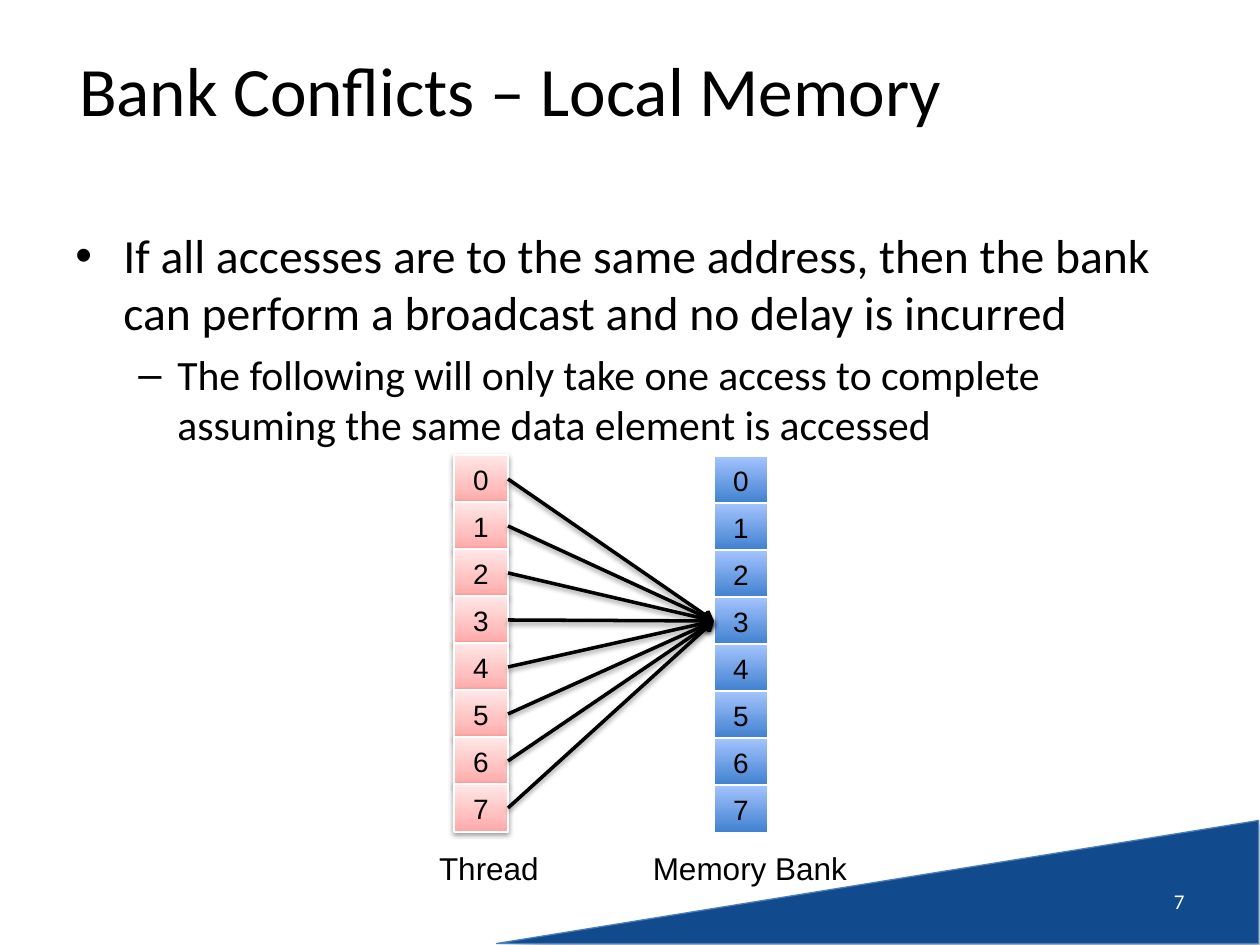
from lxml.etree import SubElement
from pptx import Presentation
from pptx.dml.color import RGBColor
from pptx.enum.shapes import MSO_CONNECTOR, MSO_SHAPE
from pptx.enum.text import MSO_ANCHOR, MSO_AUTO_SIZE, PP_ALIGN
from pptx.oxml.ns import qn
from pptx.util import Emu, Pt

PX_PER_INCH = 126
BLACK, WHITE = "000000", "FFFFFF"
THREAD_STOPS = [(0, "FFA6A5"), (35, "FFC0BF"), (100, "FFE7E7")]
BANK_STOPS = [(0, "3F80CE"), (100, "A4C4FF")]
CELL_COUNT, CELL_PITCH, CELL_WIDTH, CELL_HEIGHT = 8, 47, 54, 48
TARGET_BANK = 3


def px(length):
    return Emu(round(length * 914400 / PX_PER_INCH))


def box(*lengths):
    return [px(length) for length in lengths]


def color(hex_code):
    return RGBColor.from_string(hex_code)


def write(frame, text, size, font="Calibri", ink=BLACK, align=PP_ALIGN.CENTER,
          anchor=MSO_ANCHOR.MIDDLE, wrap=True):
    frame.auto_size = MSO_AUTO_SIZE.NONE
    frame.word_wrap = wrap
    frame.vertical_anchor = anchor
    frame.text = text
    paragraph = frame.paragraphs[0]
    paragraph.alignment = align
    format_font(paragraph.font, size, font, ink)


def format_font(target, size, name, ink):
    target.size = Pt(size)
    target.name = name
    target.color.rgb = color(ink)


def add_shadow(shape, opacity, distance=1.6):
    """Cast a soft shadow straight down; call after fill and line are set."""
    effects = SubElement(shape._element.spPr, qn("a:effectLst"))
    shadow = SubElement(effects, qn("a:outerShdw"), blurRad=str(Pt(3.1)),
                        dist=str(Pt(distance)), dir="5400000", rotWithShape="0")
    black = SubElement(shadow, qn("a:srgbClr"), val=BLACK)
    SubElement(black, qn("a:alpha"), val=str(opacity * 1000))


def fill_gradient(fill, stops):
    """Run the stops from the bottom edge to the top edge."""
    fill.gradient()
    fill.gradient_angle = 90
    stop_list = fill._xPr.find(qn("a:gradFill")).find(qn("a:gsLst"))
    stop_list.clear()
    for percent, hex_code in stops:
        stop = SubElement(stop_list, qn("a:gs"), pos=str(percent * 1000))
        SubElement(stop, qn("a:srgbClr"), val=hex_code)


def add_corner(slide):
    corner = slide.shapes.add_shape(MSO_SHAPE.RIGHT_TRIANGLE, *box(816, 501, 123, 762))
    corner.rotation = 270
    corner.fill.solid()
    corner.fill.fore_color.rgb = color("114B8E")
    corner.line.color.rgb = color("4B7EBC")
    corner.line.width = Pt(0.75)
    add_shadow(corner, 35, 1.8)


def add_label(slide, bounds, text, size, **style):
    label = slide.shapes.add_textbox(*box(*bounds))
    write(label.text_frame, text, size, **style)


def add_bullets(slide, bounds, items):
    frame = slide.shapes.add_textbox(*box(*bounds)).text_frame
    frame.word_wrap = True
    for index, (text, mark, level, size, margin, hanging) in enumerate(items):
        paragraph = frame.paragraphs[0] if index == 0 else frame.add_paragraph()
        paragraph.text = text
        paragraph.level = level
        properties = paragraph._p.get_or_add_pPr()
        properties.set("marL", str(px(margin)))
        properties.set("indent", str(px(-hanging)))
        if index:
            paragraph.space_before = Pt(round(size * 0.2, 1))
        SubElement(properties, qn("a:buFont"), typeface="Arial")
        SubElement(properties, qn("a:buChar"), char=mark)
        format_font(paragraph.font, size, "Calibri", BLACK)


def add_column(slide, left, top, stops, shadowed):
    """Stack the numbered cells and return them from top to bottom."""
    cells = []
    for number in range(CELL_COUNT):
        bounds = box(left, top + number * CELL_PITCH, CELL_WIDTH, CELL_HEIGHT)
        cell = slide.shapes.add_shape(MSO_SHAPE.RECTANGLE, *bounds)
        fill_gradient(cell.fill, stops)
        cell.line.color.rgb = color(WHITE)
        cell.line.width = Pt(1)
        if shadowed:
            add_shadow(cell, 38)
        else:
            cell.shadow.inherit = False
        write(cell.text_frame, str(number), 16, font="Arial")
        cells.append(cell)
    return cells


def add_access(slide, thread, bank):
    access = slide.shapes.add_connector(MSO_CONNECTOR.STRAIGHT, 0, 0, 0, 0)
    access.begin_connect(thread, 3)
    access.end_connect(bank, 1)
    access.line.color.rgb = color(BLACK)
    access.line.width = Pt(2)
    SubElement(access.line._get_or_add_ln(), qn("a:tailEnd"), type="arrow")
    add_shadow(access, 38)


def main():
    presentation = Presentation()
    presentation.slide_width, presentation.slide_height = box(1260, 945)
    slide = presentation.slides.add_slide(presentation.slide_layouts[5])

    title = slide.shapes.title
    title.left, title.top, title.width, title.height = box(63, 10, 895, 158)
    write(title.text_frame, "Bank Conflicts – Local Memory", 39.6)

    add_corner(slide)
    add_bullets(slide, (63, 220, 1134, 233), [
        ("If all accesses are to the same address, then the bank can perform "
         "a broadcast and no delay is incurred", "•", 0, 27.2, 48, 48),
        ("The following will only take one access to complete assuming "
         "the same data element is accessed", "–", 1, 23.8, 102, 39),
    ])
    add_label(slide, (903, 876, 294, 50), "7", 12, ink=WHITE, align=PP_ALIGN.RIGHT)

    banks = add_column(slide, 714, 456, BANK_STOPS, shadowed=False)
    threads = add_column(slide, 454, 455, THREAD_STOPS, shadowed=True)
    for bounds, text in [((639, 843, 222, 50), "Memory Bank"),
                         ((426, 843, 126, 50), "Thread")]:
        add_label(slide, bounds, text, 18, font="Arial",
                  anchor=MSO_ANCHOR.TOP, wrap=False)
    for thread in threads:
        add_access(slide, thread, banks[TARGET_BANK])

    presentation.save("out.pptx")


if __name__ == "__main__":
    main()
